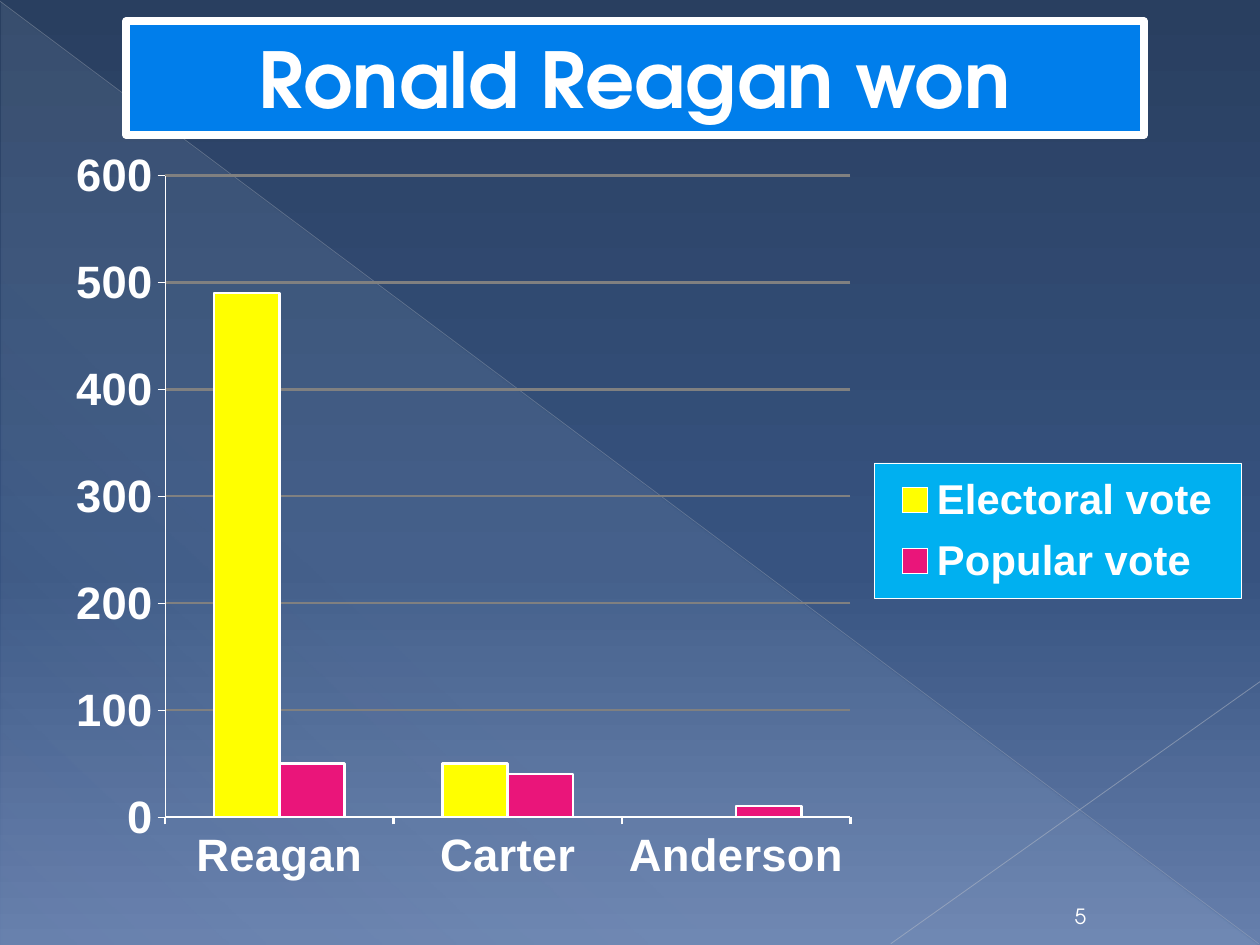
"""Build the election result slide with its clustered column chart."""
from dataclasses import dataclass

import pptx
import pptx.chart.data
import pptx.dml.color
import pptx.enum.chart
import pptx.enum.shapes
import pptx.enum.text
import pptx.oxml
import pptx.oxml.ns
import pptx.util

Inches = pptx.util.Inches
Pt = pptx.util.Pt
qn = pptx.oxml.ns.qn

COLORS = {
    "white": "FFFFFF", "title": "007EEB", "legend": "00B0F0", "grid": "808080",
    "electoral": "FFFF00", "popular": "EA157A", "glow": "D6ECFF",
    "sky_top": "293F60", "sky_middle": "375380", "sky_bottom": "667FAC",
    "diagonal": "B7BCC5", "corner": "BFC3CB",
}
DISPLAY_FONT = "TeX Gyre Adventor"
CHART_FONT = "Arial"
NAMESPACES = " ".join(pptx.oxml.ns.nsdecls(prefix) for prefix in ("a", "c"))


@dataclass
class Stop:
    position: int
    color: str
    opacity: int = 100


@dataclass
class Ray:
    start: tuple[float, float]
    end: tuple[float, float]
    color: str
    width: float
    opacity: int


@dataclass
class Votes:
    name: str
    counts: tuple[int, ...]
    color: str


SKY = [Stop(0, "sky_top"), Stop(60, "sky_middle"), Stop(100, "sky_bottom")]
GLOW = [Stop(0, "glow", 10), Stop(70, "glow", 8), Stop(100, "glow", 1)]
RAYS = [
    Ray((0, 0.01), (9.99, 7.49), "diagonal", 0.39, 35),
    Ray((10, 5.41), (7.07, 7.49), "corner", 0.47, 45),
]
CANDIDATES = ["Reagan", "Carter", "Anderson"]
RESULTS = [
    Votes("Electoral vote", (490, 50, 0), "electoral"),
    Votes("Popular vote", (50, 40, 10), "popular"),
]


def rgb(name: str) -> pptx.dml.color.RGBColor:
    return pptx.dml.color.RGBColor.from_string(COLORS[name])


def xml(markup: str):
    tag, rest = markup.split(">", 1)
    return pptx.oxml.parse_xml(f"{tag} {NAMESPACES}>{rest}")


def paint(fill, color: str) -> None:
    fill.solid()
    fill.fore_color.rgb = rgb(color)


def stroke(line, color: str, width: float) -> None:
    paint(line.fill, color)
    line.width = Pt(width)


def style_font(font, size: float, name: str, bold: bool) -> None:
    font.size = Pt(size)
    font.name = name
    font.bold = bold
    font.color.rgb = rgb("white")


def set_gradient(fill, owner, stops: list[Stop], angle: int) -> None:
    fill.gradient()
    gradient = next(owner.iter(qn("a:gradFill")))
    for child in list(gradient):
        gradient.remove(child)
    marks = "".join(
        f'<a:gs pos="{stop.position * 1000}"><a:srgbClr val="{COLORS[stop.color]}">'
        f'<a:alpha val="{stop.opacity * 1000}"/></a:srgbClr></a:gs>'
        for stop in stops
    )
    gradient.append(xml(f"<a:gsLst>{marks}</a:gsLst>"))
    gradient.append(pptx.oxml.parse_xml(
        f'<a:lin {NAMESPACES} ang="{angle * 60000}" scaled="0"/>'))


def draw_ray(slide, ray: Ray) -> None:
    points = [Inches(value) for value in ray.start + ray.end]
    connector = slide.shapes.add_connector(
        pptx.enum.shapes.MSO_CONNECTOR.STRAIGHT, *points)
    stroke(connector.line, ray.color, ray.width)
    color = next(connector.element.iter(qn("a:srgbClr")))
    color.append(pptx.oxml.parse_xml(
        f'<a:alpha {NAMESPACES} val="{ray.opacity * 1000}"/>'))
    connector.element.spPr.append(xml("<a:effectLst></a:effectLst>"))


def draw_backdrop(slide) -> None:
    set_gradient(slide.background.fill, slide.element, SKY, 90)
    glow = slide.shapes.add_shape(
        pptx.enum.shapes.MSO_SHAPE.RIGHT_TRIANGLE,
        Inches(0.01), Inches(0.02), Inches(9.98), Inches(7.48))
    glow.shadow.inherit = False
    glow.line.fill.background()
    set_gradient(glow.fill, glow.element, GLOW, 133)
    for ray in RAYS:
        draw_ray(slide, ray)


def write_centered(shape, text: str, size: float, bold: bool) -> None:
    frame = shape.text_frame
    frame.word_wrap = True
    frame.text = text
    paragraph = frame.paragraphs[0]
    paragraph.alignment = pptx.enum.text.PP_ALIGN.CENTER
    style_font(paragraph.runs[0].font, size, DISPLAY_FONT, bold)


def manual_layout(left: float, top: float, width: float, height: float,
                  inner: bool = False):
    target = '<c:layoutTarget val="inner"/>' if inner else ""
    sizes = zip("xywh", (left, top, width, height))
    modes = '<c:xMode val="edge"/><c:yMode val="edge"/>'
    values = "".join(f'<c:{key} val="{value}"/>' for key, value in sizes)
    return xml(f"<c:layout><c:manualLayout>{target}{modes}{values}"
               "</c:manualLayout></c:layout>")


def replace_layout(parent, layout, index: int) -> None:
    for old in parent.findall(qn("c:layout")):
        parent.remove(old)
    parent.insert(index, layout)


def style_axis(axis, width: float) -> None:
    style_font(axis.tick_labels.font, 25.9, CHART_FONT, True)
    stroke(axis.format.line, "white", width)
    axis.major_tick_mark = pptx.enum.chart.XL_TICK_MARK.OUTSIDE
    axis.minor_tick_mark = pptx.enum.chart.XL_TICK_MARK.NONE


def style_legend(chart) -> None:
    chart.has_legend = True
    legend = chart.legend
    legend.position = pptx.enum.chart.XL_LEGEND_POSITION.RIGHT
    legend.include_in_layout = False
    style_font(legend.font, 23.8, CHART_FONT, True)
    element = next(chart.element.iter(qn("c:legend")))
    replace_layout(element, manual_layout(0.69, 0.415, 0.307, 0.17), 1)
    element.find(qn("c:txPr")).addprevious(xml(
        f'<c:spPr><a:solidFill><a:srgbClr val="{COLORS["legend"]}"/></a:solidFill>'
        f'<a:ln w="4572"><a:solidFill><a:srgbClr val="{COLORS["white"]}"/>'
        "</a:solidFill></a:ln></c:spPr>"))


def draw_chart(slide) -> None:
    data = pptx.chart.data.CategoryChartData()
    data.categories = CANDIDATES
    for votes in RESULTS:
        data.add_series(votes.name, votes.counts)
    chart = slide.shapes.add_chart(
        pptx.enum.chart.XL_CHART_TYPE.COLUMN_CLUSTERED,
        Inches(0.39), Inches(1.06), Inches(9.49), Inches(6.3), data).chart
    chart.has_title = False
    style_font(chart.font, 25.9, CHART_FONT, True)
    plot = chart.plots[0]
    plot.vary_by_categories = False
    plot.gap_width = 150
    plot.overlap = 0
    for series, votes in zip(plot.series, RESULTS):
        paint(series.format.fill, votes.color)
        stroke(series.format.line, "white", 1.44)
        series.invert_if_negative = False
    style_axis(chart.category_axis, 1.44)
    chart.category_axis.tick_label_position = pptx.enum.chart.XL_TICK_LABEL_POSITION.LOW
    scale = chart.value_axis
    style_axis(scale, 0.36)
    scale.minimum_scale, scale.maximum_scale, scale.major_unit = 0, 600, 100
    stroke(scale.major_gridlines.format.line, "grid", 1.44)
    plot_area = next(chart.element.iter(qn("c:plotArea")))
    replace_layout(plot_area, manual_layout(0.097, 0.053, 0.573, 0.808, True), 0)
    style_legend(chart)


def main() -> None:
    deck = pptx.Presentation()
    deck.slide_width, deck.slide_height = Inches(10), Inches(7.5)
    slide = deck.slides.add_slide(deck.slide_layouts[6])
    draw_backdrop(slide)
    page_number = slide.shapes.add_textbox(
        Inches(8.3), Inches(7.09), Inches(0.55), Inches(0.33))
    write_centered(page_number, "5", 12, False)
    page_number.text_frame.vertical_anchor = pptx.enum.text.MSO_ANCHOR.BOTTOM
    draw_chart(slide)
    headline = slide.shapes.add_shape(
        pptx.enum.shapes.MSO_SHAPE.RECTANGLE,
        Inches(1), Inches(0.17), Inches(8.08), Inches(0.9))
    headline.shadow.inherit = False
    paint(headline.fill, "title")
    stroke(headline.line, "white", 4.5)
    write_centered(headline, "Ronald Reagan won", 44, True)
    deck.save("out.pptx")


if __name__ == "__main__":
    main()
